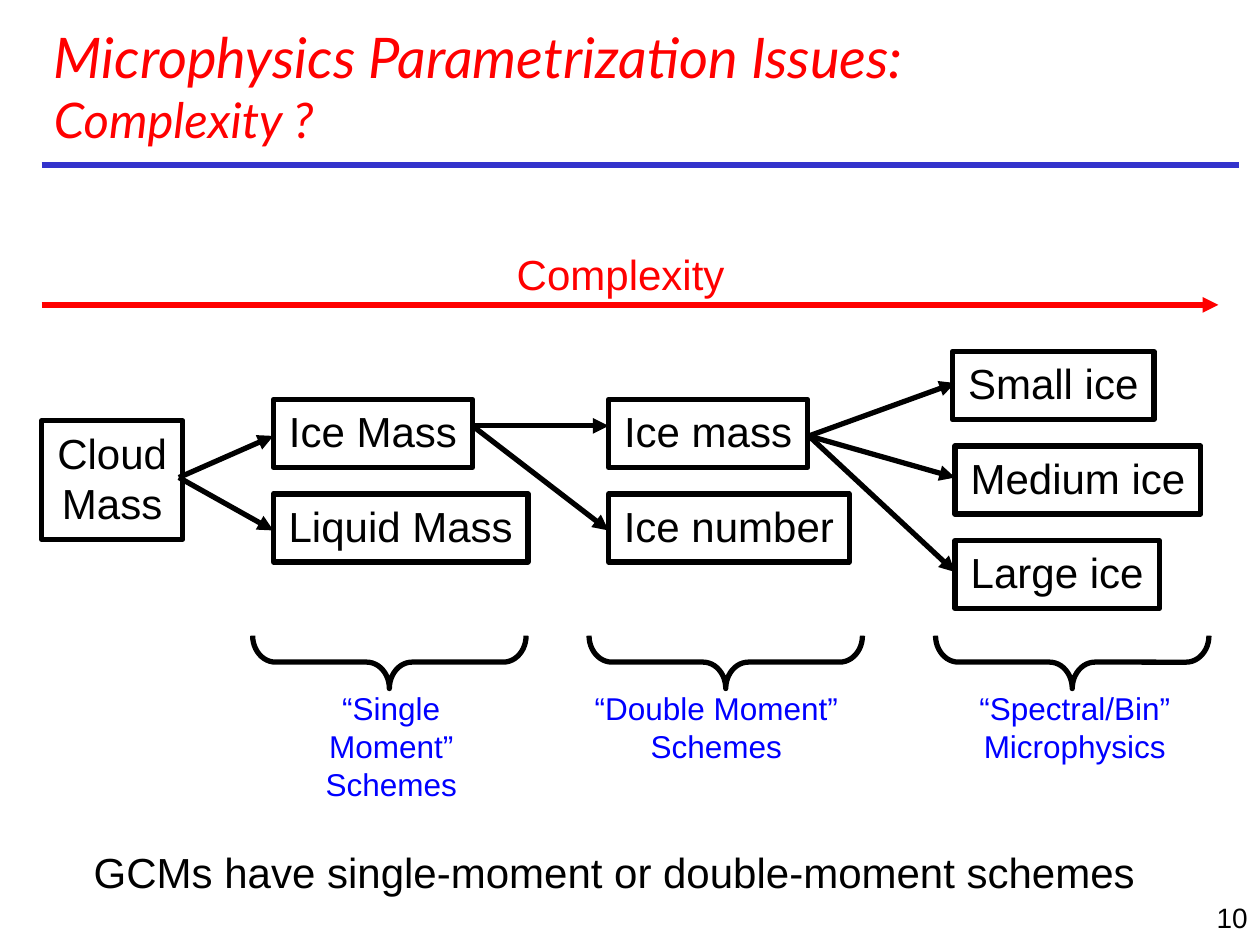
"""Build the slide on the complexity of microphysics parametrizations."""
from lxml import etree
from pptx import Presentation
from pptx.dml.color import RGBColor
from pptx.enum.shapes import MSO_CONNECTOR, MSO_SHAPE
from pptx.enum.text import MSO_ANCHOR, PP_ALIGN
from pptx.oxml.ns import qn
from pptx.util import Inches, Pt

STRAIGHT = MSO_CONNECTOR.STRAIGHT
BRACE = MSO_SHAPE.RIGHT_BRACE
MIDDLE = MSO_ANCHOR.MIDDLE
LEFT, CENTER, RIGHT = PP_ALIGN.LEFT, PP_ALIGN.CENTER, PP_ALIGN.RIGHT
BLACK, RED, BLUE, RULE_BLUE = "000000", "FF0000", "0000FF", "3333CC"


def color(value):
    return RGBColor.from_string(value)


def add_text(place, lines, size, ink=BLACK, align=CENTER, wrap=False):
    box = page.shapes.add_textbox(*[Inches(value) for value in place])
    box.text_frame.text = "\n".join(lines)
    box.text_frame.word_wrap = wrap
    for para in box.text_frame.paragraphs:
        para.alignment = align
        for span in para.runs:
            span.font.name = "Arial"
            span.font.size = Pt(size)
            span.font.color.rgb = color(ink)
    return box


deck = Presentation()
deck.slide_width, deck.slide_height = Inches(10), Inches(7.5)
page = deck.slides.add_slide(deck.slide_layouts[6])

title = add_text((0.33, 0.22, 8, 0.92),
                 ["Microphysics Parametrization Issues:", "Complexity ?"],
                 32, RED, LEFT, True)
title.text_frame.vertical_anchor = MIDDLE
for para, size in zip(title.text_frame.paragraphs, (32, 28)):
    para.runs[0].font.name = "Lato"
    para.runs[0].font.size = Pt(size)
    para.runs[0].font.italic = True

add_text((7.92, 7.1, 2.08, 0.5), ["10"], 16, align=RIGHT, wrap=True)
add_text((4, 1.92, 1.85, 0.5), ["Complexity"], 24, RED)
add_text((0.51, 6.67, 8.73, 0.5),
         ["GCMs have single-moment or double-moment schemes"], 24)

variables = [
    (0.33, 3.34, 1.12, ["Cloud", "Mass"]),
    (2.17, 3.17, 1.58, ["Ice Mass"]),
    (2.17, 3.92, 2.02, ["Liquid Mass"]),
    (4.83, 3.17, 1.58, ["Ice mass"]),
    (4.83, 3.92, 1.91, ["Ice number"]),
    (7.56, 2.79, 1.6, ["Small ice"]),
    (7.58, 3.54, 1.95, ["Medium ice"]),
    (7.58, 4.29, 1.62, ["Large ice"]),
]
for left, top, width, lines in variables:
    height = 0.14 + 0.4 * len(lines)
    box = add_text((left, top, width, height), lines, 24)
    box.line.color.rgb = color(BLACK)
    box.line.width = Pt(3)

links = [
    ((0.33, 1.31), (9.83, 1.31), RULE_BLUE, False),
    ((0.33, 2.42), (9.67, 2.42), RED, True),
]
branches = [
    ((1.42, 3.79), [(2.17, 3.46), (2.17, 4.21)]),
    ((3.75, 3.38), [(4.83, 3.38), (4.83, 4.21)]),
    ((6.42, 3.46), [(7.58, 3.04), (7.58, 3.79), (7.58, 4.54)]),
]
for start, ends in branches:
    links += [(start, end, BLACK, True) for end in ends]
for start, end, ink, arrow in links:
    link = page.shapes.add_connector(
        STRAIGHT, *[Inches(value) for value in start + end])
    link.line.color.rgb = color(ink)
    link.line.width = Pt(3)
    if arrow:
        etree.SubElement(link.line._get_or_add_ln(), qn("a:tailEnd"), type="triangle")
    etree.SubElement(link._element.spPr, qn("a:effectLst"))

schemes = [
    (2.88, 2.09, 2.03, ["“Single Moment”", "Schemes"]),
    (5.55, 4.62, 2.13, ["“Double Moment”", "Schemes"]),
    (8.3, 7.67, 1.72, ["“Spectral/Bin”", "Microphysics"]),
]
for brace_left, label_left, label_width, lines in schemes:
    brace = page.shapes.add_shape(
        BRACE, Inches(brace_left), Inches(4.17), Inches(0.42), Inches(2.17))
    brace.rotation = 90
    brace.adjustments[0] = 0.43
    brace.shadow.inherit = False
    brace.fill.background()
    brace.line.color.rgb = color(BLACK)
    brace.line.width = Pt(3)
    add_text((label_left, 5.42, label_width, 0.7), lines, 18, BLUE)

deck.save("out.pptx")
